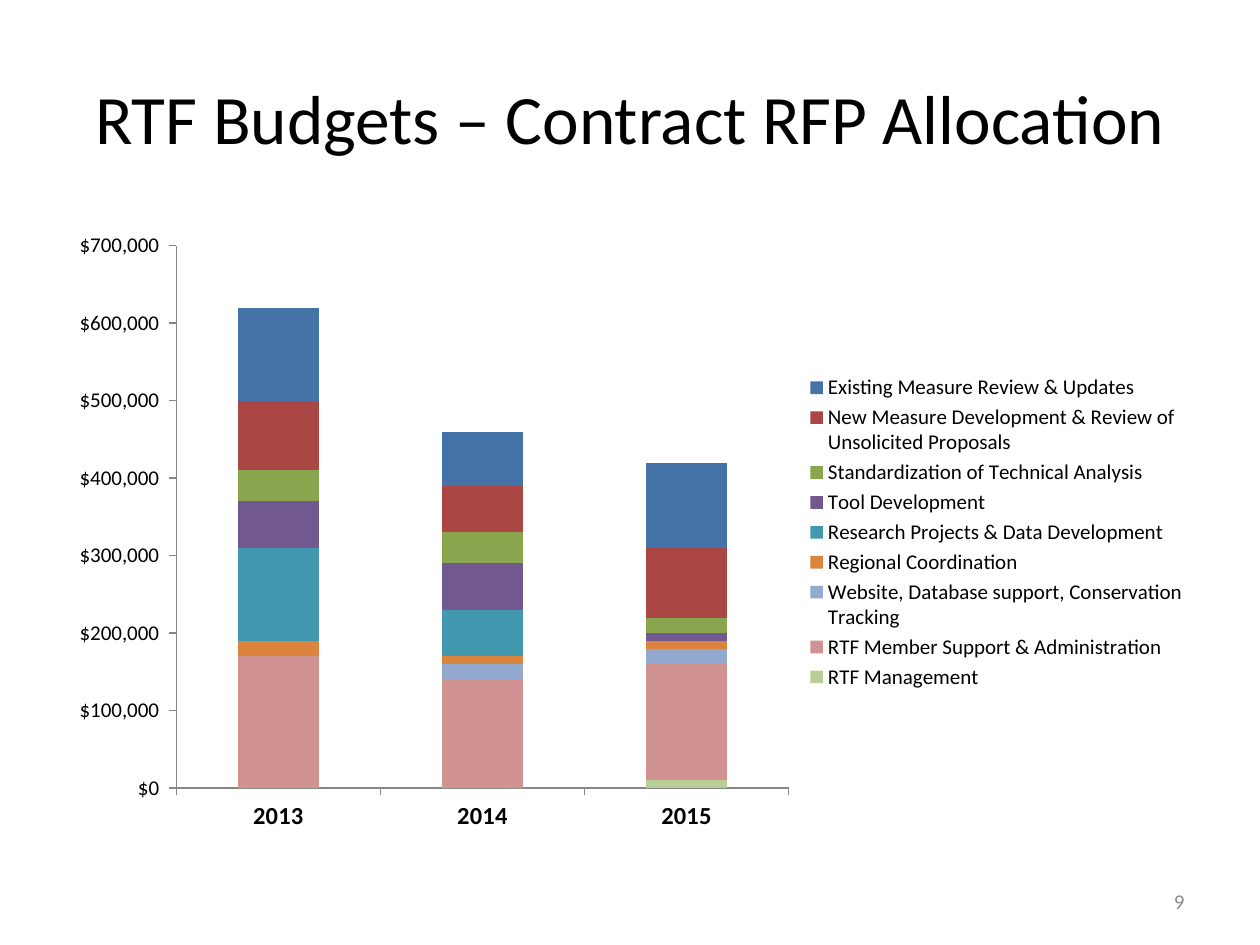
import pptx
import pptx.chart.data
import pptx.dml.color
import pptx.enum.chart
import pptx.enum.text
import pptx.oxml
import pptx.oxml.ns
import pptx.util
from pptx.util import Cm

TITLE = "RTF Budgets – Contract RFP Allocation"
PAGE = "9"
FONT = "Calibri"
YEARS = ["2013", "2014", "2015"]
COLORS = {
    "text": "000000", "page": "8C8C8C", "axis": "868686",
    "blue": "4572A7", "red": "AA4643", "green": "89A54E",
    "purple": "71588F", "teal": "4198AF", "orange": "DB843D",
    "sky": "93A9CF", "rose": "D19392", "lime": "B9CD96",
}
# Bottom of the stack first: name, dollars by year, colour
BUDGET = [
    ("RTF Management", (0, 0, 10000), "lime"),
    ("RTF Member Support & Administration", (170000, 140000, 150000), "rose"),
    ("Website, Database support, Conservation Tracking", (0, 20000, 20000), "sky"),
    ("Regional Coordination", (20000, 10000, 10000), "orange"),
    ("Research Projects & Data Development", (120000, 60000, 0), "teal"),
    ("Tool Development", (60000, 60000, 10000), "purple"),
    ("Standardization of Technical Analysis", (40000, 40000, 20000), "green"),
    ("New Measure Development & Review of Unsolicited Proposals",
     (90000, 60000, 90000), "red"),
    ("Existing Measure Review & Updates", (120000, 70000, 110000), "blue"),
]
# Shares of the chart frame: left, top, width, height
PLOT = (0.1, 0.04, 0.54, 0.87)
LEGEND = (0.67, 0.24, 0.33, 0.52)


def rgb(name):
    return pptx.dml.color.RGBColor.from_string(COLORS[name])


def style(font, size, color="text", bold=False):
    font.name = FONT
    font.size = pptx.util.Pt(size)
    font.bold = bold
    font.color.rgb = rgb(color)


def write(frame, text, size, color, align):
    frame.word_wrap = True
    frame.vertical_anchor = pptx.enum.text.MSO_ANCHOR.MIDDLE
    line = frame.paragraphs[0]
    line.alignment = align
    run = line.add_run()
    run.text = text
    style(run.font, size, color)


def layout(box, inner=False):
    """Make a manual layout element from shares of the chart frame."""
    target = '<c:layoutTarget val="inner"/>' if inner else ""
    modes = '<c:xMode val="edge"/><c:yMode val="edge"/>'
    sizes = "".join(f'<c:{key} val="{val}"/>' for key, val in zip("xywh", box))
    return pptx.oxml.parse_xml(
        f'<c:layout {pptx.oxml.ns.nsdecls("c")}><c:manualLayout>'
        f"{target}{modes}{sizes}</c:manualLayout></c:layout>")


def place(chart):
    area = chart._chartSpace.chart.plotArea
    for old in area.findall(pptx.oxml.ns.qn("c:layout")):
        area.remove(old)
    area.insert(0, layout(PLOT, inner=True))
    key = chart.legend._element
    for old in key.findall(pptx.oxml.ns.qn("c:layout")):
        key.remove(old)
    key.find(pptx.oxml.ns.qn("c:legendPos")).addnext(layout(LEGEND))


def draw(slide):
    data = pptx.chart.data.CategoryChartData()
    data.categories = YEARS
    for name, vals, _ in BUDGET:
        data.add_series(name, vals)
    chart = slide.shapes.add_chart(
        pptx.enum.chart.XL_CHART_TYPE.COLUMN_STACKED,
        Cm(1.27), Cm(4.45), Cm(22.86), Cm(12.57), data).chart
    style(chart.font, 10)
    chart.has_title = False
    plot = chart.plots[0]
    plot.vary_by_categories = False
    plot.overlap = 100
    plot.gap_width = 150
    for series, (_, _, color) in zip(plot.series, BUDGET):
        series.format.fill.solid()
        series.format.fill.fore_color.rgb = rgb(color)

    for axis, size, bold in ((chart.category_axis, 14, True),
                             (chart.value_axis, 12, False)):
        axis.has_major_gridlines = False
        axis.major_tick_mark = pptx.enum.chart.XL_TICK_MARK.OUTSIDE
        axis.format.line.color.rgb = rgb("axis")
        axis.format.line.width = pptx.util.Pt(0.75)
        style(axis.tick_labels.font, size, bold=bold)
    scale = chart.value_axis
    scale.minimum_scale, scale.maximum_scale = 0, 700000
    scale.major_unit = 100000
    scale.tick_labels.number_format = r'"$"#,##0_);\("$"#,##0\)'
    scale.tick_labels.number_format_is_linked = False

    chart.has_legend = True
    chart.legend.position = pptx.enum.chart.XL_LEGEND_POSITION.RIGHT
    chart.legend.include_in_layout = False
    style(chart.legend.font, 12)
    place(chart)


def main():
    deck = pptx.Presentation()
    deck.slide_width, deck.slide_height = Cm(25.4), Cm(19.05)
    slide = deck.slides.add_slide(deck.slide_layouts[5])
    align = pptx.enum.text.PP_ALIGN

    title = slide.shapes.title
    title.left, title.top = Cm(1.27), Cm(0.76)
    title.width, title.height = Cm(22.86), Cm(3.18)
    write(title.text_frame, TITLE, 39.6, "text", align.CENTER)
    draw(slide)
    page = slide.shapes.add_textbox(Cm(18.2), Cm(17.66), Cm(5.93), Cm(1.01))
    write(page.text_frame, PAGE, 12, "page", align.RIGHT)
    deck.save("out.pptx")


if __name__ == "__main__":
    main()
